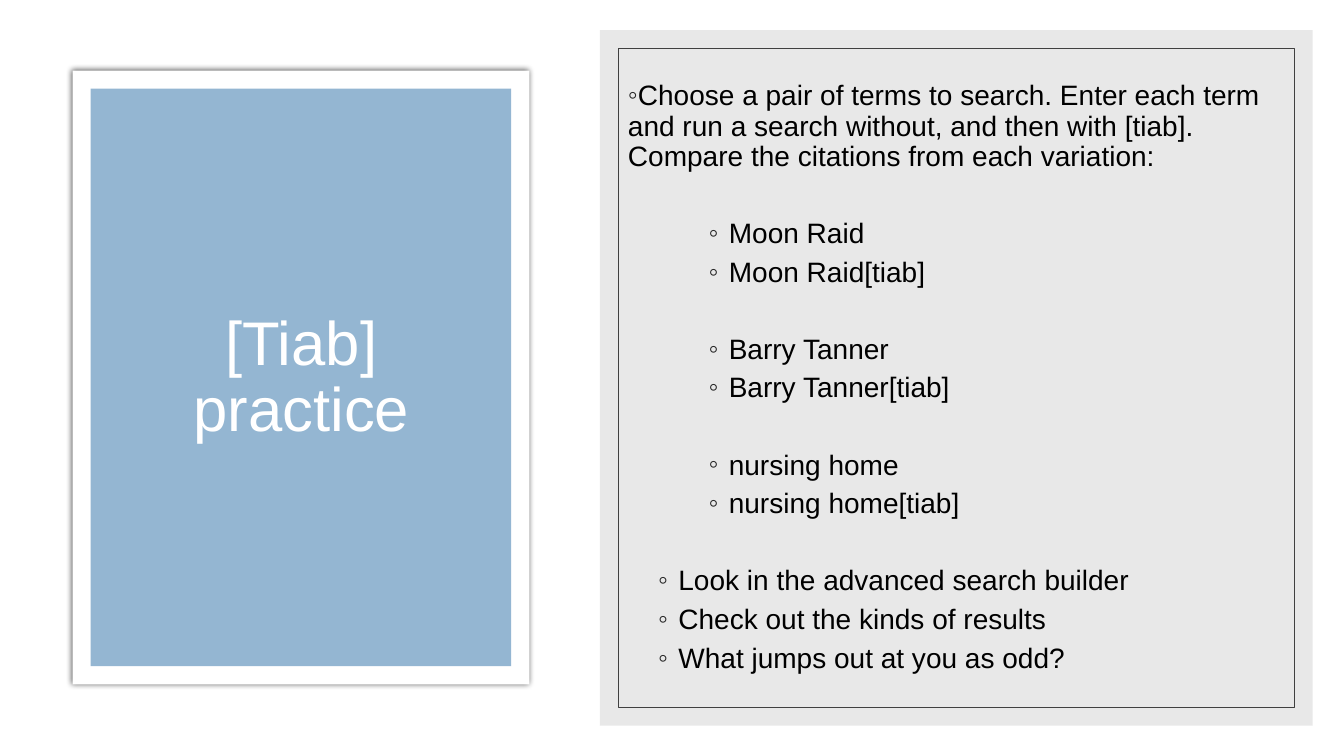
"""Build the [Tiab] practice slide: a title card beside a panel of search exercises."""
from lxml import etree
from pptx import Presentation
from pptx.dml.color import RGBColor
from pptx.enum import shapes, text
from pptx.oxml import ns
from pptx.util import Inches, Pt

WHITE = RGBColor(0xFF, 0xFF, 0xFF)
BLACK = RGBColor(0, 0, 0)
BLUE = RGBColor(0x94, 0xB6, 0xD2)
PANEL_GREY = RGBColor(0xD9, 0xD9, 0xD9)
FRAME_GREY = RGBColor(0x40, 0x40, 0x40)
BULLET_GREY = RGBColor(0x26, 0x26, 0x26)
GAP = 27.5


def add_xml(parent, tag, **attributes):
    return etree.SubElement(parent, ns.qn(tag), attributes)


def add_box(box, fill=None, line=None):
    shape = slide.shapes.add_shape(shapes.MSO_SHAPE.RECTANGLE, *map(Inches, box))
    shape.shadow.inherit = False
    if fill is None:
        shape.fill.background()
    else:
        shape.fill.solid()
        shape.fill.fore_color.rgb = fill
    if line is None:
        shape.line.fill.background()
    else:
        shape.line.color.rgb = line
        shape.line.width = Pt(0.5)
    return shape


deck = Presentation()
deck.slide_width, deck.slide_height = Inches(13.33), Inches(7.5)
slide = deck.slides.add_slide(deck.slide_layouts[6])

add_box((0, 0, 13.33, 7.5), WHITE)
card = add_box((0.72, 0.7, 4.53, 6.09), WHITE)
add_box((0.9, 0.88, 4.17, 5.73), BLUE)
panel = add_box((5.95, 0.3, 7.07, 6.9), PANEL_GREY)
add_box((6.13, 0.48, 6.71, 6.54), line=FRAME_GREY)

effects = card._element.spPr.find(ns.qn("a:effectLst"))
glow = add_xml(effects, "a:outerShdw", blurRad=str(Pt(4)), dist="0", dir="0",
               algn="ctr", rotWithShape="0")
add_xml(add_xml(glow, "a:srgbClr", val=str(BLACK)), "a:alpha", val="66000")
panel_color = panel._element.spPr.find(".//" + ns.qn("a:srgbClr"))
add_xml(panel_color, "a:alpha", val="60000")

title_lines = [("[Tiab] practice", None, 0)]
exercise_lines = [
    ("Choose a pair of terms to search. Enter each term and run a search without, "
     "and then with [tiab]. Compare the citations from each variation:", 0, 0),
]
for term in ("Moon Raid", "Barry Tanner", "nursing home"):
    exercise_lines += [(term, 1, GAP), (f"{term}[tiab]", 1, 0)]
exercise_lines += [
    ("Look in the advanced search builder", 0.5, GAP),
    ("Check out the kinds of results", 0.5, 0),
    ("What jumps out at you as odd?", 0.5, 0),
]

blocks = [
    ((1.08, 1.3, 3.82, 4.91), title_lines, text.PP_ALIGN.CENTER, 0,
     {"size": Pt(44), "name": "Arial"}, WHITE),
    ((6.13, 0.48, 6.79, 6.54), exercise_lines, text.PP_ALIGN.LEFT, 6,
     {"size": Pt(20), "name": "Arial"}, BLACK),
]
for box, lines, alignment, after, font_format, color in blocks:
    frame = slide.shapes.add_textbox(*map(Inches, box)).text_frame
    frame.word_wrap = True
    frame.vertical_anchor = text.MSO_ANCHOR.MIDDLE
    for number, (wording, indent, before) in enumerate(lines):
        paragraph = frame.add_paragraph() if number else frame.paragraphs[0]
        spacing = {"alignment": alignment, "line_spacing": 0.9,
                   "space_before": Pt(before), "space_after": Pt(after)}
        for name, value in spacing.items():
            setattr(paragraph, name, value)
        run = paragraph.add_run()
        run.text = wording
        for name, value in font_format.items():
            setattr(run.font, name, value)
        run.font.color.rgb = color
        if indent is not None:
            properties = paragraph._p.get_or_add_pPr()
            properties.set("marL", str(Inches(indent)))
            properties.set("indent", str(Inches(-0.2)))
            bullet_color = add_xml(properties, "a:buClr")
            add_xml(bullet_color, "a:srgbClr", val=str(BULLET_GREY))
            add_xml(properties, "a:buFont", typeface="Arial")
            add_xml(properties, "a:buChar", char="◦")

deck.save("out.pptx")
